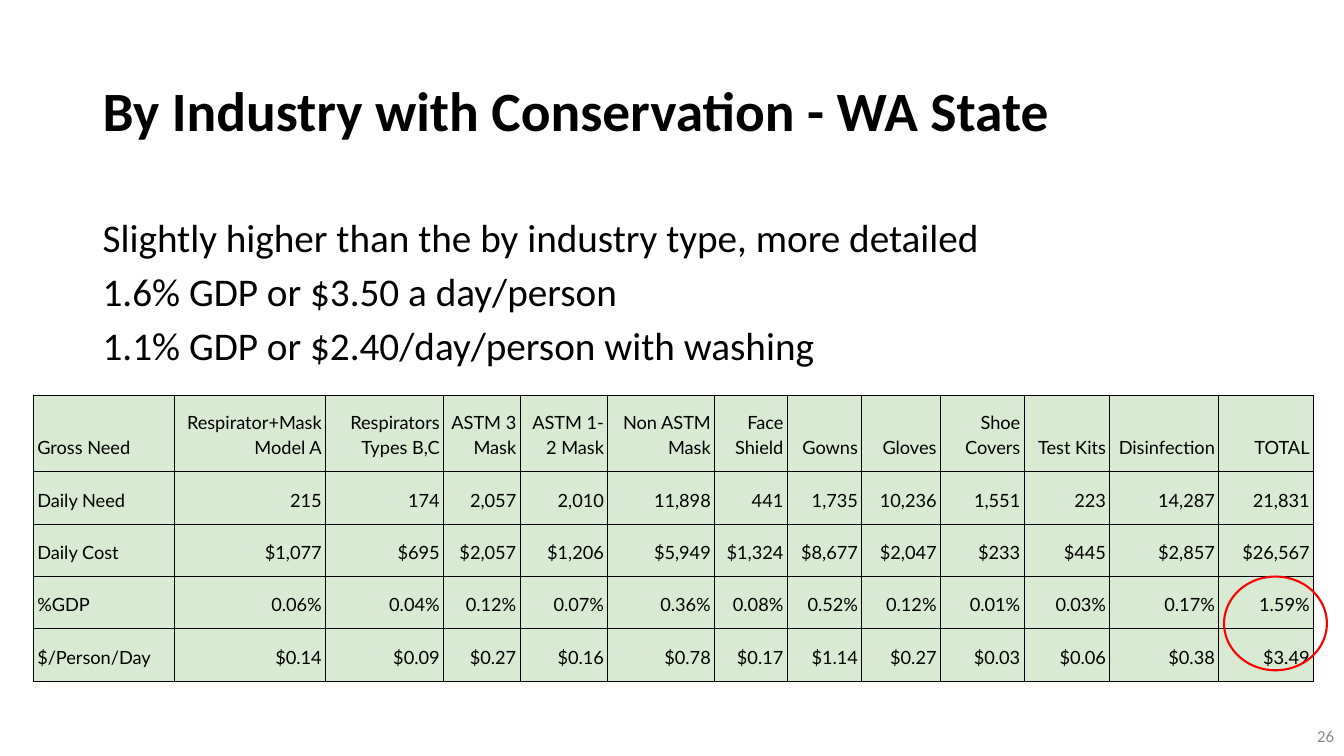
"""Build the slide on protective equipment need by industry in WA State."""
from dataclasses import dataclass

from lxml import etree
from pptx import Presentation
from pptx import util as u
from pptx.dml.color import RGBColor
from pptx.enum import shapes, text
from pptx.oxml import ns

BLACK, GREY, RED, GREEN = "000000", "888888", "FF0000", "D9EAD3"
LEFT, RIGHT = text.PP_ALIGN.LEFT, text.PP_ALIGN.RIGHT
TOP, MIDDLE, BOTTOM = (text.MSO_ANCHOR.TOP, text.MSO_ANCHOR.MIDDLE,
                       text.MSO_ANCHOR.BOTTOM)


@dataclass(frozen=True)
class Column:
    """One table column: its width in inches and its cells from top to bottom."""
    width: float
    cells: tuple[str, ...]


@dataclass(frozen=True)
class TextBlock:
    """One text box: its place in inches, lines and format."""
    place: tuple[float, float, float, float]
    lines: tuple[str, ...]
    size: float
    anchor: text.MSO_ANCHOR = MIDDLE
    color: str = BLACK
    bold: bool = False
    align: text.PP_ALIGN = LEFT
    spacing: float = 1.0


COLUMNS = (
    Column(1.4, ("Gross Need", "Daily Need", "Daily Cost", "%GDP", "$/Person/Day")),
    Column(1.5, ("Respirator+Mask Model A", "215", "$1,077", "0.06%", "$0.14")),
    Column(1.17, ("Respirators Types B,C", "174", "$695", "0.04%", "$0.09")),
    Column(0.76, ("ASTM 3 Mask", "2,057", "$2,057", "0.12%", "$0.27")),
    Column(0.87, ("ASTM 1-2 Mask", "2,010", "$1,206", "0.07%", "$0.16")),
    Column(1.06, ("Non ASTM Mask", "11,898", "$5,949", "0.36%", "$0.78")),
    Column(0.72, ("Face Shield", "441", "$1,324", "0.08%", "$0.17")),
    Column(0.74, ("Gowns", "1,735", "$8,677", "0.52%", "$1.14")),
    Column(0.78, ("Gloves", "10,236", "$2,047", "0.12%", "$0.27")),
    Column(0.83, ("Shoe Covers", "1,551", "$233", "0.01%", "$0.03")),
    Column(0.85, ("Test Kits", "223", "$445", "0.03%", "$0.06")),
    Column(1.08, ("Disinfection", "14,287", "$2,857", "0.17%", "$0.38")),
    Column(0.94, ("TOTAL", "21,831", "$26,567", "1.59%", "$3.49")),
)
ROW_HEIGHTS = (0.76, 0.52, 0.52, 0.52, 0.52)

TEXT_BLOCKS = (
    TextBlock((0.92, 0.4, 11.5, 1.45), ("By Industry with Conservation - WA State",),
              39.6, bold=True, spacing=0.9),
    TextBlock((0.92, 2, 11.5, 4.76),
              ("Slightly higher than the by industry type, more detailed",
               "1.6% GDP or $3.50 a day/person",
               "1.1% GDP or $2.40/day/person with washing"),
              28, anchor=TOP, spacing=1.15),
    TextBlock((10.33, 7.1, 3, 0.4), ("26",), 12, color=GREY, align=RIGHT),
)


def rgb(value: str) -> RGBColor:
    """Turn a hex string into a colour."""
    return RGBColor.from_string(value)


def write(para, words: str, *, size: float, font: str = "Calibri", color: str = BLACK,
          bold: bool = False, align: text.PP_ALIGN = LEFT, spacing: float = 1.0) -> None:
    """Put formatted words into a paragraph."""
    para.alignment = align
    para.line_spacing = spacing
    span = para.add_run()
    span.text = words
    span.font.name = font
    span.font.size = u.Pt(size)
    span.font.bold = bold
    span.font.color.rgb = rgb(color)


def draw_text(page, block: TextBlock) -> None:
    """Draw one text box."""
    box = page.shapes.add_textbox(*map(u.Inches, block.place))
    frame = box.text_frame
    frame.word_wrap = True
    frame.vertical_anchor = block.anchor
    for number, line in enumerate(block.lines):
        para = frame.add_paragraph() if number else frame.paragraphs[0]
        write(para, line, size=block.size, color=block.color, bold=block.bold,
              align=block.align, spacing=block.spacing)


def add_borders(cell, color: str, width: float) -> None:
    """Rule all four sides of a cell."""
    properties = cell._tc.get_or_add_tcPr()
    for position, side in enumerate(("a:lnL", "a:lnR", "a:lnT", "a:lnB")):
        line = etree.Element(ns.qn(side), w=str(u.Pt(width)))
        fill = etree.SubElement(line, ns.qn("a:solidFill"))
        etree.SubElement(fill, ns.qn("a:srgbClr"), val=color)
        properties.insert(position, line)


def draw_table(page, columns: tuple[Column, ...], heights: tuple[float, ...]) -> None:
    """Draw the table of need and cost."""
    width = sum(column.width for column in columns)
    table = page.shapes.add_table(
        len(heights), len(columns), u.Inches(0.33), u.Inches(3.92),
        u.Inches(width), u.Inches(sum(heights))).table
    table.first_row = table.horz_banding = False
    for row, height in zip(table.rows, heights):
        row.height = u.Inches(height)
    for across, column in enumerate(columns):
        table.columns[across].width = u.Inches(column.width)
        for down, words in enumerate(column.cells):
            cell = table.cell(down, across)
            cell.fill.solid()
            cell.fill.fore_color.rgb = rgb(GREEN)
            cell.vertical_anchor = BOTTOM
            cell.margin_left = cell.margin_right = u.Inches(0.04)
            cell.margin_top = cell.margin_bottom = u.Inches(0.13)
            write(cell.text_frame.paragraphs[0], words, size=13, font="Lato",
                  align=RIGHT if across else LEFT, spacing=1.15)
            add_borders(cell, BLACK, 0.75)


def draw_ring(page, place: tuple[float, float, float, float]) -> None:
    """Circle the totals in red."""
    ring = page.shapes.add_shape(shapes.MSO_SHAPE.OVAL, *map(u.Inches, place))
    ring.shadow.inherit = False
    ring.fill.background()
    ring.line.color.rgb = rgb(RED)
    ring.line.width = u.Pt(1.5)


def main() -> None:
    """Build and save the deck."""
    deck = Presentation()
    deck.slide_width, deck.slide_height = u.Inches(13.33), u.Inches(7.5)
    page = deck.slides.add_slide(deck.slide_layouts[6])
    draw_table(page, COLUMNS, ROW_HEIGHTS)
    for block in TEXT_BLOCKS:
        draw_text(page, block)
    draw_ring(page, (12.14, 5.72, 1.02, 0.93))
    deck.save("out.pptx")


if __name__ == "__main__":
    main()
